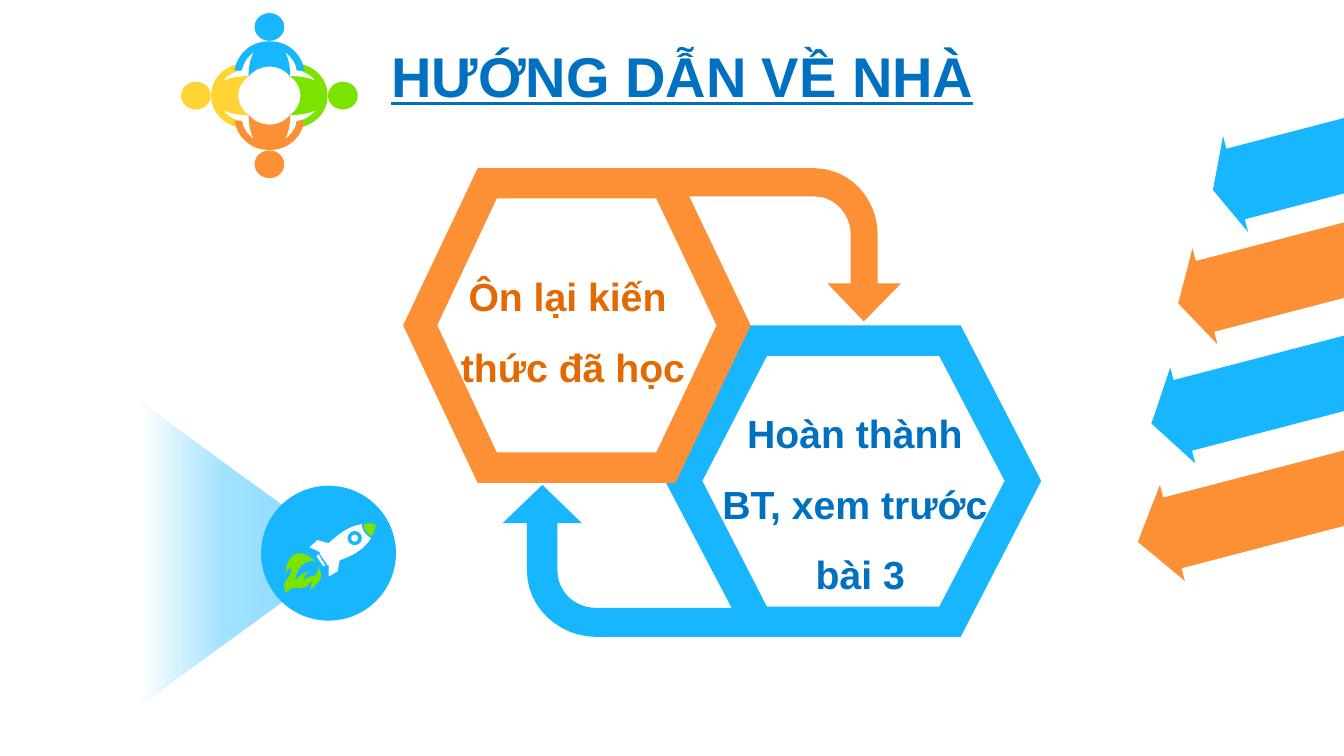
"""Build the closing homework slide: two linked hexagons, a rocket, a team icon and side arrows."""
from copy import deepcopy

from pptx import Presentation
from pptx.dml.color import RGBColor
from pptx.enum.shapes import MSO_SHAPE
from pptx.enum.text import MSO_ANCHOR, PP_ALIGN
from pptx.util import Cm, Pt

OVAL, DONUT, TRAPEZOID = MSO_SHAPE.OVAL, MSO_SHAPE.DONUT, MSO_SHAPE.TRAPEZOID
MIDDLE, TOP, CENTER = MSO_ANCHOR.MIDDLE, MSO_ANCHOR.TOP, PP_ALIGN.CENTER

BLUE = RGBColor(0x17, 0xB6, 0xFF)
ORANGE = RGBColor(0xFD, 0x90, 0x34)
GREEN = RGBColor(0x7C, 0xE2, 0x00)
YELLOW = RGBColor(0xFF, 0xD4, 0x34)
WHITE = RGBColor(0xFF, 0xFF, 0xFF)
TITLE_BLUE = RGBColor(0x00, 0x70, 0xC0)
TEXT_ORANGE = RGBColor(0xE3, 0x69, 0x02)
BEAM_COLORS = [RGBColor(0x8B, 0xDA, 0xFF), RGBColor(0xA2, 0xE2, 0xFF), WHITE]

FONT = "Arial"
TITLE = ["HƯỚNG DẪN VỀ NHÀ"]
REVIEW = ["Ôn lại kiến ", "thức đã học"]
HOMEWORK = ["Hoàn thành ", "BT, xem trước ", "bài 3"]

# Each outline is a list of points in cm; a point with six numbers is a cubic curve.
BLUE_HEXAGON = [
    [(24.21, 16.05), (15.04, 16.05), (14.07, 16.05, 13.28, 15.29, 13.28, 14.38),
     (13.28, 13.18), (12.67, 13.18), (13.67, 12.22), (14.66, 13.18), (14.05, 13.18),
     (14.05, 14.38), (14.05, 14.91, 14.48, 15.32, 15.04, 15.32), (18.44, 15.32),
     (16.76, 12.12), (18.82, 8.2), (24.21, 8.2), (26.24, 12.12)],
    [(23.67, 15.29), (25.32, 12.12), (23.67, 8.97), (19.33, 8.97), (17.7, 12.12),
     (19.33, 15.29)],
]
ORANGE_HEXAGON = [
    [(12.04, 4.24), (20.52, 4.24), (21.41, 4.24, 22.12, 5, 22.12, 5.92),
     (22.12, 7.14), (22.71, 7.14), (21.77, 8.1), (20.85, 7.14), (21.44, 7.14),
     (21.44, 5.92), (21.44, 5.38, 21.03, 4.95, 20.52, 4.95), (17.37, 4.95),
     (18.92, 8.2), (17.02, 12.17), (12.04, 12.17), (10.16, 8.2)],
    [(12.52, 5), (11.02, 8.2), (12.52, 11.4), (16.54, 11.4), (18.06, 8.2), (16.54, 5)],
]
ROCKET_BODY = [
    [(9.12, 13.21), (9.12, 13.36, 9.22, 13.49, 9.35, 13.56),
     (9.17, 13.87, 8.84, 14.02, 8.56, 14.12), (8.51, 14.4), (8.28, 14.53),
     (8.28, 14.22), (8.26, 14.25), (8.05, 13.94), (8.08, 13.92), (7.8, 13.79),
     (8, 13.61), (8.28, 13.69), (8.51, 13.49, 8.76, 13.26, 9.12, 13.21)],
    [(8.03, 13.97), (8.2, 14.25), (8.15, 14.27), (7.98, 14.02)],
]
ROCKET_NOSE = [
    [(9.47, 13.21), (9.45, 13.34, 9.42, 13.44, 9.37, 13.51),
     (9.25, 13.46, 9.17, 13.34, 9.17, 13.21), (9.27, 13.18, 9.37, 13.18, 9.47, 13.21)],
]
ROCKET_FLAME = [
    [(7.95, 14.17), (7.8, 14.07, 7.47, 14.22, 7.44, 14.63),
     (7.59, 14.45, 7.7, 14.43, 7.82, 14.4), (7.77, 14.45, 7.65, 14.45, 7.67, 14.61),
     (7.8, 14.45, 8, 14.63, 8.03, 14.27), (8.2, 14.66, 7.98, 14.66, 7.85, 14.86),
     (7.8, 14.81, 7.9, 14.61, 7.82, 14.68), (7.62, 14.96, 7.42, 14.68, 7.21, 14.94),
     (7.04, 14.63, 7.37, 14.55, 7.34, 14.35), (7.32, 14.33, 7.26, 14.3, 7.19, 14.48),
     (7.24, 13.74, 7.75, 13.89, 7.95, 14.17)],
]
HALF_PERSON = [
    (0, 1.37), (0.45, 1.37, 0.75, 1.05, 0.82, 0.65), (0.8, 0.63), (0.66, 0.63),
    (0.65, 0.65), (0.61, 0.82, 0.52, 0.98, 0.37, 1.09),
    (0.45, 0.93, 0.49, 0.74, 0.49, 0.48), (0.37, 0.64, 0.2, 0.73, 0, 0.73),
]
TEAM = [(YELLOW, -1, 0), (GREEN, 1, 0), (BLUE, 0, -1), (ORANGE, 0, 1)]
TEAM_X, TEAM_Y, TEAM_STRETCH, HEAD_DISTANCE = 6.79, 2.41, 1.07, 1.73
SIDE_ARROWS = [(33.05, 4.14, 5.13, BLUE), (32.63, 6.88, 6.07, ORANGE),
               (32.45, 9.78, 7.09, BLUE), (32.46, 12.67, 7.82, ORANGE)]


def flatten(outline, steps=12):
    points = [outline[0]]
    for item in outline[1:]:
        if len(item) == 2:
            points.append(item)
            continue
        corners = [points[-1], item[:2], item[2:4], item[4:]]
        for step in range(1, steps + 1):
            t = step / steps
            weights = [(1 - t) ** 3, 3 * t * (1 - t) ** 2, 3 * t * t * (1 - t), t ** 3]
            points.append(tuple(sum(w * corner[axis] for w, corner in zip(weights, corners))
                                for axis in (0, 1)))
    return points


def paint(shape, color):
    shape.shadow.inherit = False
    shape.fill.solid()
    shape.fill.fore_color.rgb = color
    shape.line.fill.background()
    return shape


def add_outline(page, outlines, color):
    contours = [[(Cm(x), Cm(y)) for x, y in flatten(outline)] for outline in outlines]
    builder = page.shapes.build_freeform(*contours[0][0])
    builder.add_line_segments(contours[0][1:])
    for contour in contours[1:]:
        builder.move_to(*contour[0])
        builder.add_line_segments(contour[1:])
    return paint(builder.convert_to_shape(), color)


def add_preset(page, kind, center_x, center_y, width, height, color):
    shape = page.shapes.add_shape(kind, Cm(center_x - width / 2), Cm(center_y - height / 2),
                                  Cm(width), Cm(height))
    return paint(shape, color)


def add_text(page, lines, left, top, width, height, *, size, color, spacing,
             before=0, underline=False, wrap=False, anchor=TOP):
    box = page.shapes.add_textbox(Cm(left), Cm(top), Cm(width), Cm(height))
    frame = box.text_frame
    frame.word_wrap = wrap
    frame.vertical_anchor = anchor
    for index, line in enumerate(lines):
        para = frame.add_paragraph() if index else frame.paragraphs[0]
        para.alignment = CENTER
        para.line_spacing = spacing
        para.space_before = Pt(before)
        span = para.add_run()
        span.text = line
        span.font.name = FONT
        span.font.size = Pt(size)
        span.font.bold = True
        span.font.underline = underline
        span.font.color.rgb = color


def add_person(page, color, out_x, out_y):
    def place(side, out):
        return (TEAM_X + TEAM_STRETCH * (out * out_x - side * out_y),
                TEAM_Y + out * out_y + side * out_x)

    half = flatten(HALF_PERSON)
    whole = half + [(-side, out) for side, out in reversed(half)]
    add_outline(page, [[place(side, out) for side, out in whole]], color)
    add_preset(page, OVAL, *place(0, HEAD_DISTANCE), 0.75, 0.7, color)


def add_beam(page):
    beam = add_preset(page, TRAPEZOID, 5.65, 13.95, 7.59, 4.22, WHITE)
    beam.adjustments[0] = 0.722
    beam.rotation = 90
    beam.fill.gradient()
    beam.fill.gradient_angle = 270
    stops = beam.fill.gradient_stops
    first = stops[0]._element
    first.addnext(deepcopy(first))
    for index, (stop, color) in enumerate(zip(beam.fill.gradient_stops, BEAM_COLORS)):
        stop.color.rgb = color
        stop.position = index / 2


def add_side_arrow(page, center_x, center_y, width, color):
    left, right = center_x - width / 2, center_x + width / 2
    neck, slant = left + 0.115 * width, 0.037 * width
    head, shaft = 1.25, 0.92
    arrow = add_outline(page, [[
        (right, center_y - shaft), (right - slant, center_y + shaft),
        (neck, center_y + shaft), (neck, center_y + head), (left, center_y),
        (neck, center_y - head), (neck, center_y - shaft)]], color)
    arrow.rotation = 345.4


def main():
    deck = Presentation()
    deck.slide_width, deck.slide_height = Cm(33.87), Cm(19.05)
    page = deck.slides.add_slide(deck.slide_layouts[6])
    add_text(page, TITLE, 1.12, 0.99, 32.16, 2.01, size=40, color=TITLE_BLUE, spacing=0.9,
             before=10, underline=True, wrap=True, anchor=MIDDLE)
    add_outline(page, BLUE_HEXAGON, BLUE)
    add_outline(page, ORANGE_HEXAGON, ORANGE)
    add_text(page, REVIEW, 11.33, 6.15, 6.22, 3.84, size=28, color=TEXT_ORANGE, spacing=1.5)
    add_text(page, HOMEWORK, 17.91, 9.6, 7.54, 5.64, size=28, color=TITLE_BLUE, spacing=1.5)
    for color, out_x, out_y in TEAM:
        add_person(page, color, out_x, out_y)
    add_beam(page)
    add_preset(page, OVAL, 8.28, 13.94, 3.4, 3.4, BLUE)
    add_outline(page, ROCKET_BODY, WHITE)
    add_preset(page, DONUT, 8.94, 13.56, 0.36, 0.36, BLUE)
    add_outline(page, ROCKET_NOSE, GREEN)
    add_outline(page, ROCKET_FLAME, GREEN)
    for arrow in SIDE_ARROWS:
        add_side_arrow(page, *arrow)
    deck.save("out.pptx")


if __name__ == "__main__":
    main()
